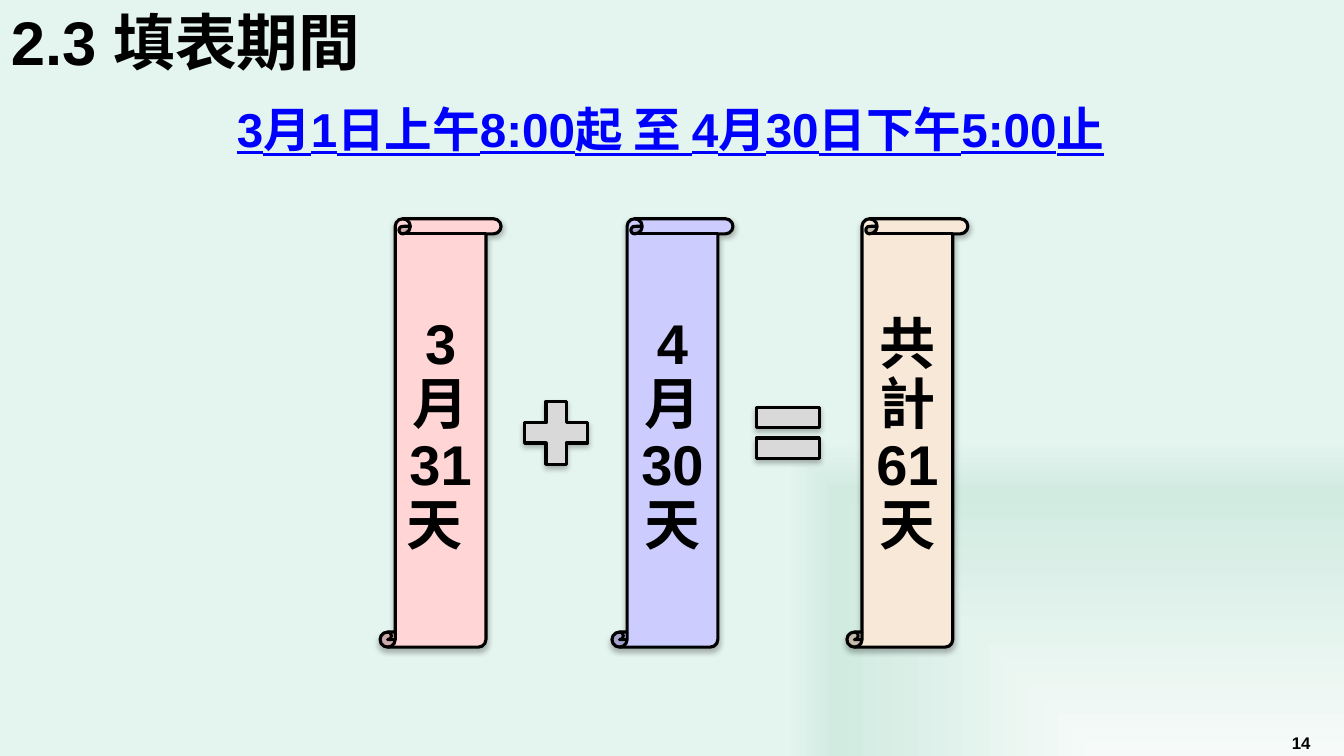
"""Builds the slide that shows the form-filling period as a sum of days."""
from pptx import Presentation
from pptx.dml.color import RGBColor
from pptx.enum.shapes import MSO_SHAPE
from pptx.enum.text import MSO_ANCHOR, PP_ALIGN
from pptx.oxml import parse_xml
from pptx.util import Inches, Pt

BLACK = RGBColor(0, 0, 0)
BLUE = RGBColor(0, 0, 255)
GREY = RGBColor(0xD9, 0xD9, 0xD9)
PINK = RGBColor(0xFF, 0xD5, 0xD5)
LILAC = RGBColor(0xCC, 0xCC, 0xFF)
CREAM = RGBColor(0xF7, 0xE8, 0xD7)

WIDE, HIGH = 13.33, 7.5
LEFT, STEP, TOP = 3.77, 2.3, 2.17
TALL, BROAD = 4.25, 1.2
PAD, SIGN, SHIFT = 0.15, 0.85, 1.32

TITLE = "2.3 填表期間"
PERIOD = "3月1日上午8:00起 至 4月30日下午5:00止"
NUMBER = "14"
SCROLLS = [("3月\v31天 ", PINK, 0), ("4月\v30天", LILAC, 0), ("共計61天", CREAM, 0.03)]
SIGNS = [MSO_SHAPE.MATH_PLUS, MSO_SHAPE.MATH_EQUAL]
STOPS = [(0, "F6FBF9"), (70, "D1EBE1"), (83, "E4F4EF"), (100, "E4F4EF")]

BASE = {"name": "Arial", "bold": True}
NS = 'xmlns:a="http://schemas.openxmlformats.org/drawingml/2006/main"'
PNS = 'xmlns:p="http://schemas.openxmlformats.org/presentationml/2006/main"'
SHADOW = (f'<a:outerShdw {NS} blurRad="50800" dist="25400" dir="5400000" algn="t" '
          'rotWithShape="0"><a:srgbClr val="000000"><a:alpha val="28000"/>'
          '</a:srgbClr></a:outerShdw>')


def paint(slide):
    stops = "".join(f'<a:gs pos="{pos * 1000}"><a:srgbClr val="{tint}"/></a:gs>'
                    for pos, tint in STOPS)
    slide.element.cSld.insert(0, parse_xml(
        f'<p:bg {PNS} {NS}><p:bgPr><a:gradFill rotWithShape="1"><a:gsLst>{stops}'
        '</a:gsLst><a:path path="rect"><a:fillToRect l="100000" t="100000"/></a:path>'
        '</a:gradFill><a:effectLst/></p:bgPr></p:bg>'))


def write(slide, box, text, size, align=PP_ALIGN.CENTER, color=BLACK, line=None,
          anchor=MSO_ANCHOR.MIDDLE, pad=None, **extra):
    frame = slide.shapes.add_textbox(*map(Inches, box)).text_frame
    form = {"word_wrap": True, "vertical_anchor": anchor}
    if pad is not None:
        form |= {f"margin_{side}": Inches(pad)
                 for side in ("left", "top", "right", "bottom")}
    for key, value in form.items():
        setattr(frame, key, value)
    para = frame.paragraphs[0]
    para.text, para.alignment, para.line_spacing = text, align, line
    for run in para.runs:
        for key, value in (BASE | {"size": Pt(size)} | extra).items():
            setattr(run.font, key, value)
        run.font.color.rgb = color


def draw(slide, kind, box, fill):
    shape = slide.shapes.add_shape(kind, *map(Inches, box))
    shape.fill.solid()
    shape.fill.fore_color.rgb = fill
    shape.line.color.rgb = BLACK
    shape.line.width = Pt(2.25)
    shape.shadow.inherit = False
    shape.element.spPr.find("{*}effectLst").append(parse_xml(SHADOW))


def main():
    deck = Presentation()
    deck.slide_width, deck.slide_height = Inches(WIDE), Inches(HIGH)
    slide = deck.slides.add_slide(deck.slide_layouts[6])
    paint(slide)
    write(slide, (WIDE - 0.85, HIGH - 0.28, 0.85, 0.28), NUMBER, 12,
          anchor=MSO_ANCHOR.TOP)
    write(slide, (0.01, 0.12, 7.76, 0.67), TITLE, 44, PP_ALIGN.LEFT, line=0.9)
    write(slide, (2.11, 0.94, 9.08, 0.67), PERIOD, 34, color=BLUE,
          anchor=MSO_ANCHOR.TOP, underline=True)
    for col, (text, fill, nudge) in enumerate(SCROLLS):
        left = LEFT + col * STEP + nudge
        draw(slide, MSO_SHAPE.VERTICAL_SCROLL, (left, TOP, BROAD, TALL), fill)
        write(slide, (left + PAD, TOP + PAD, BROAD - 2 * PAD, 4.03), text, 40,
              line=0.9, pad=0.06)
    for col, kind in enumerate(SIGNS):
        left = LEFT + col * STEP + SHIFT
        draw(slide, kind, (left, TOP + (TALL - SIGN) / 2, SIGN, SIGN), GREY)
    deck.save("out.pptx")


if __name__ == "__main__":
    main()
